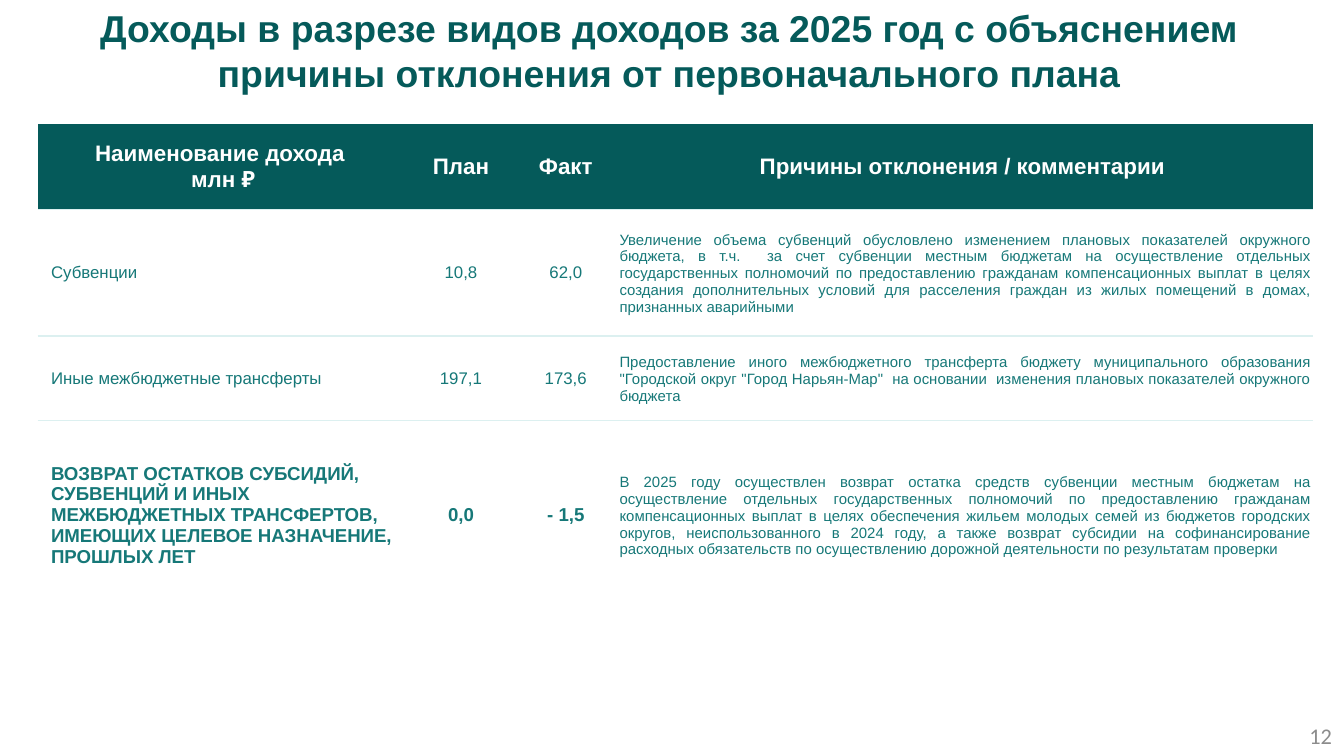
from lxml import etree
from pptx import Presentation
from pptx.dml.color import RGBColor
from pptx.enum import text
from pptx.oxml.ns import qn
from pptx.util import Inches, Pt

DARK, TEAL, PALE, WHITE, GREY = "055A5A", "167878", "DCF0F0", "FFFFFF", "8C8C8C"
NO_STYLE = "{2D5ABB26-0587-4C30-8999-92F81FD0307C}"
LEFT, CENTER = text.PP_ALIGN.LEFT, text.PP_ALIGN.CENTER
RIGHT, JUSTIFY = text.PP_ALIGN.RIGHT, text.PP_ALIGN.JUSTIFY


def format_text(frame, size, color, align, bold=False, font="Arial"):
    for paragraph in frame.paragraphs:
        paragraph.alignment = align
        for run in paragraph.runs:
            run.font.name = font
            run.font.size = Pt(size)
            run.font.bold = bold
            run.font.color.rgb = RGBColor.from_string(color)


def add_border(cell, side):
    """Draw a pale 1 pt line on one side, given as lnT or lnB."""
    line = etree.SubElement(cell._tc.get_or_add_tcPr(), qn(f"a:{side}"), w=str(Pt(1)))
    fill = etree.SubElement(line, qn("a:solidFill"))
    etree.SubElement(fill, qn("a:srgbClr"), val=PALE)


prs = Presentation()
prs.slide_width = Inches(10)
prs.slide_height = Inches(10 * 9 / 16)
slide = prs.slides.add_slide(prs.slide_layouts[5])

# Title
title = slide.shapes.title
title.left, title.top = Inches(0), Inches(-0.01)
title.width, title.height = Inches(9.96), Inches(0.77)
heading = title.text_frame
heading.text = ("Доходы в разрезе видов доходов за 2025 год с объяснением "
                "причины отклонения от первоначального плана")
heading.word_wrap = True
heading.auto_size = text.MSO_AUTO_SIZE.NONE
heading.vertical_anchor = text.MSO_ANCHOR.TOP
format_text(heading, 20, DARK, CENTER, bold=True)

# Income table
income_rows = [
    ("Наименование дохода \nмлн ₽", "План", "Факт", "Причины отклонения / комментарии "),
    ("Субвенции", "10,8", "62,0",
     "Увеличение объема субвенций обусловлено изменением плановых показателей "
     "окружного бюджета, в т.ч.  за счет субвенции местным бюджетам на осуществление "
     "отдельных государственных полномочий по предоставлению гражданам "
     "компенсационных выплат в целях создания дополнительных условий для "
     "расселения граждан из жилых помещений в домах, признанных аварийными"),
    ("Иные межбюджетные трансферты", "197,1", "173,6",
     "Предоставление иного межбюджетного трансферта бюджету муниципального "
     'образования "Городской округ "Город Нарьян-Мар"  на основании  изменения '
     "плановых показателей окружного бюджета"),
    ("ВОЗВРАТ ОСТАТКОВ СУБСИДИЙ, СУБВЕНЦИЙ И ИНЫХ МЕЖБЮДЖЕТНЫХ ТРАНСФЕРТОВ, "
     "ИМЕЮЩИХ ЦЕЛЕВОЕ НАЗНАЧЕНИЕ, ПРОШЛЫХ ЛЕТ", "0,0", "- 1,5",
     "В 2025 году осуществлен возврат остатка средств субвенции местным бюджетам "
     "на осуществление отдельных государственных полномочий по предоставлению "
     "гражданам компенсационных выплат в целях обеспечения жильем молодых семей "
     "из бюджетов городских округов, неиспользованного в 2024 году, а также возврат "
     "субсидии на софинансирование расходных обязательств по осуществлению "
     "дорожной деятельности по результатам проверки"),
]
column_widths = [2.76, 0.78, 0.78, 5.17]
row_heights = [0.64, 0.94, 0.63, 1.41]
last_row = len(income_rows) - 1

income = slide.shapes.add_table(len(income_rows), len(column_widths), Inches(0.28),
                                Inches(0.92), Inches(9.49), Inches(3.62)).table
income.horz_banding = False
income._tbl.tblPr.find(qn("a:tableStyleId")).text = NO_STYLE
for column, width in zip(income.columns, column_widths):
    column.width = Inches(width)
for row, height in zip(income.rows, row_heights):
    row.height = Inches(height)

for r, values in enumerate(income_rows):
    for c, value in enumerate(values):
        cell = income.cell(r, c)
        cell.text = value
        cell.vertical_anchor = text.MSO_ANCHOR.MIDDLE
        cell.margin_left = cell.margin_right = Inches(0.1)
        cell.margin_top = cell.margin_bottom = Inches(0.04)
        if r > 0:
            add_border(cell, "lnT")
        if r < last_row:
            add_border(cell, "lnB")
        if r == 0:
            cell.fill.solid()
            cell.fill.fore_color.rgb = RGBColor.from_string(DARK)
            format_text(cell.text_frame, 12, WHITE, CENTER, bold=True)
            continue
        cell.fill.background()
        if c == 3:
            cell.margin_left = cell.margin_right = cell.margin_top = Inches(0.01)
            cell.margin_bottom = Inches(0)
            format_text(cell.text_frame, 8, TEAL, JUSTIFY)
        else:
            format_text(cell.text_frame, 10 if r == last_row else 9, TEAL,
                        LEFT if c == 0 else CENTER, bold=r == last_row)

# Page number
page_number = slide.shapes.add_textbox(Inches(7.68), Inches(5.32),
                                       Inches(2.33), Inches(0.3)).text_frame
page_number.text = "12"
page_number.word_wrap = True
page_number.vertical_anchor = text.MSO_ANCHOR.MIDDLE
format_text(page_number, 12, GREY, RIGHT, font="Calibri")

prs.save("out.pptx")
